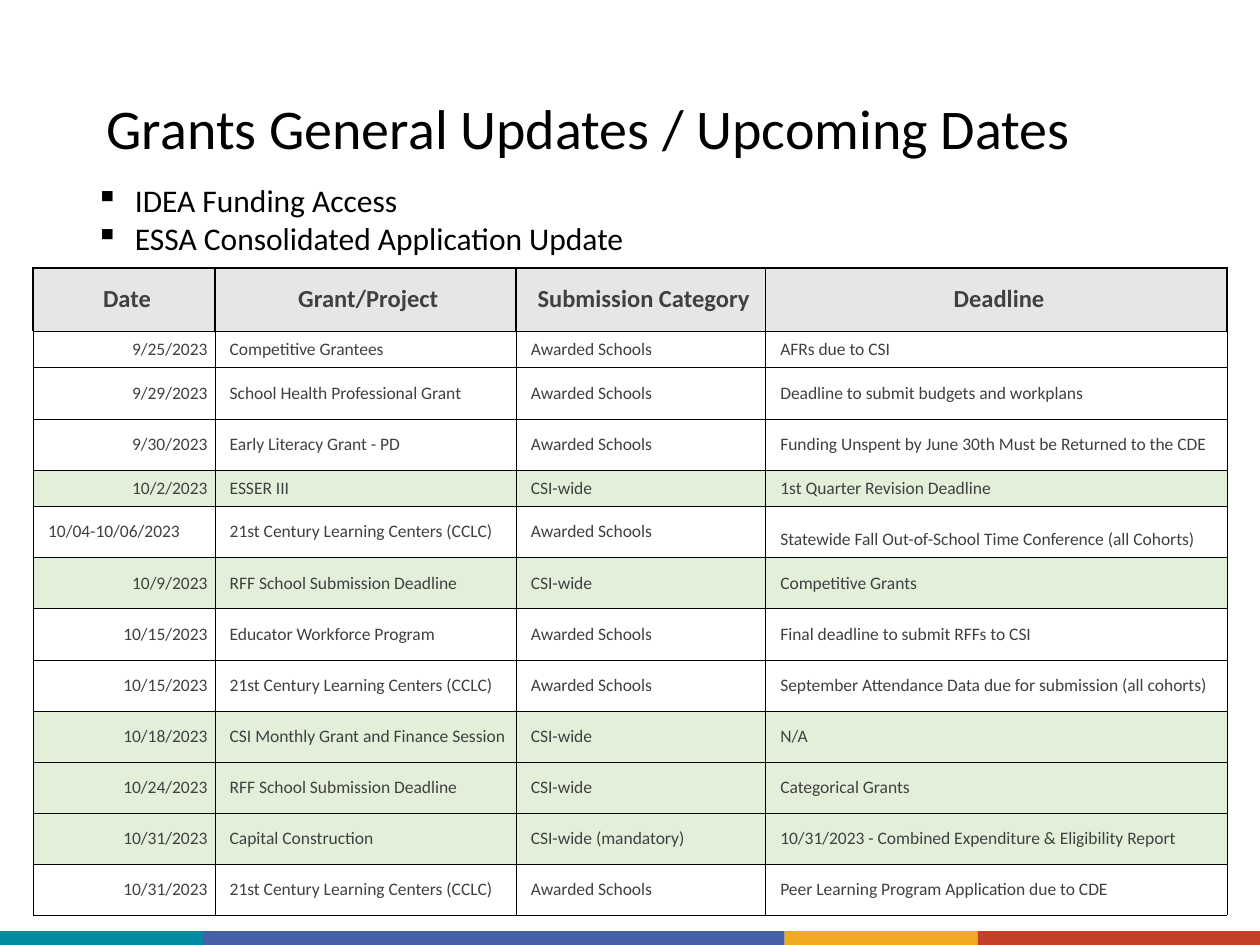
"""Build the grants update slide with its table of upcoming dates."""
from itertools import accumulate

from lxml import etree
from pptx import Presentation
from pptx.dml.color import RGBColor
from pptx.enum import shapes, text
from pptx.oxml import ns
from pptx.util import Cm, Pt

TITLE = "Grants General Updates / Upcoming Dates\u00a0"
UPDATES = ["IDEA Funding Access", "ESSA Consolidated Application Update"]
HEADINGS = ("Date", "Grant/Project", "Submission Category", "Deadline")
CENTERS = "21st Century Learning Centers (CCLC)"
SCHOOLS, WIDE = "Awarded Schools", "CSI-wide"
DATES = [
    ("9/25/2023", "Competitive Grantees", SCHOOLS, "AFRs due to CSI"),
    ("9/29/2023", "School Health Professional Grant", SCHOOLS,
     "Deadline to submit budgets and workplans"),
    ("9/30/2023", "Early Literacy Grant - PD", SCHOOLS,
     "Funding Unspent by June 30th Must be Returned to the CDE"),
    ("10/2/2023", "ESSER III", WIDE, "1st Quarter Revision Deadline"),
    ("10/04-10/06/2023", CENTERS, SCHOOLS,
     "Statewide Fall Out-of-School Time Conference (all Cohorts)"),
    ("10/9/2023", "RFF School Submission Deadline\u00a0", WIDE, "Competitive Grants"),
    ("10/15/2023", "Educator Workforce Program", SCHOOLS,
     "Final deadline to submit RFFs to CSI"),
    ("10/15/2023", CENTERS, SCHOOLS,
     "September Attendance Data due for submission (all cohorts)"),
    ("10/18/2023", "CSI Monthly Grant and Finance Session", WIDE, "N/A"),
    ("10/24/2023", "RFF School Submission Deadline\u00a0", WIDE, "Categorical Grants"),
    ("10/31/2023", "Capital Construction\u00a0", WIDE + " (mandatory)",
     "10/31/2023 - Combined Expenditure & Eligibility Report\u00a0"),
    ("10/31/2023", CENTERS, SCHOOLS, "Peer Learning Program Application due to CDE"),
]
COLUMN_WIDTHS = [3.66, 6.07, 5.03, 9.3]
HEADING_HEIGHT, ROW_HEIGHT, SHORT_HEIGHT = 1.27, 1.03, 0.74
SHORT_DATES = {"9/25/2023", "10/2/2023"}
DATE_RANGE = "10/04-10/06/2023"
FOOTER_BANDS = [("008CA0", 4.09), ("455FA9", 11.73), ("EFAA1F", 3.89), ("C63F28", 5.69)]

ALIGN, ANCHOR = text.PP_ALIGN, text.MSO_ANCHOR
TITLE_FONT = {"name": "Calibri", "size": Pt(32)}
UPDATE_FONT = {"name": "Calibri", "size": Pt(18)}
HEADING_FONT = {"name": "Calibri", "size": Pt(14), "bold": True}
DATE_FONT = {"name": "Calibri", "size": Pt(10), "bold": False}


def apply(target, formats):
    for attribute, value in formats.items():
        setattr(target, attribute, value)


def paint(color_format, color):
    color_format.rgb = RGBColor.from_string(color)


def fill(part, color):
    part.fill.solid()
    paint(part.fill.fore_color, color)


def write(paragraph, words, font, color="000000"):
    run = paragraph.add_run()
    run.text = words
    apply(run.font, font)
    paint(run.font.color, color)


def add_frame(slide, box, anchor):
    frame = slide.shapes.add_textbox(*map(Cm, box)).text_frame
    apply(frame, {"word_wrap": True, "vertical_anchor": anchor})
    return frame


def add_bullet(paragraph):
    properties = paragraph._p.get_or_add_pPr()
    apply_indent = {"marL": Cm(0.79), "indent": Cm(-0.79)}
    for key, value in apply_indent.items():
        properties.set(key, str(value))
    bullet = etree.SubElement(properties, ns.qn("a:buChar"))
    bullet.set("char", "▪")


def add_borders(cell, widths):
    properties = cell._tc.get_or_add_tcPr()
    for position, (side, width) in enumerate(widths.items()):
        line = etree.Element(ns.qn("a:ln" + side), w=str(Pt(width)))
        solid = etree.SubElement(line, ns.qn("a:solidFill"))
        etree.SubElement(solid, ns.qn("a:srgbClr"), val="000000")
        properties.insert(position, line)


def fill_cell(cell, words, font, color, align, anchor, inset, widths):
    apply(cell, {"margin_left": Cm(0.3), "margin_right": Cm(inset),
                 "margin_top": Cm(inset), "margin_bottom": Cm(inset),
                 "vertical_anchor": anchor})
    fill(cell, color)
    paragraph = cell.text_frame.paragraphs[0]
    paragraph.alignment = align
    write(paragraph, words, font, "404040")
    add_borders(cell, widths)


def add_dates(slide):
    heights = [HEADING_HEIGHT] + [SHORT_HEIGHT if entry[0] in SHORT_DATES else ROW_HEIGHT
                                  for entry in DATES]
    dates = slide.shapes.add_table(
        len(heights), len(HEADINGS), Cm(0.67), Cm(5.4),
        Cm(sum(COLUMN_WIDTHS)), Cm(sum(heights))).table
    for column, width in zip(dates.columns, COLUMN_WIDTHS):
        column.width = Cm(width)
    for row, height in zip(dates.rows, heights):
        row.height = Cm(height)

    heading_borders = {"L": 1, "R": 1, "T": 1, "B": 0.25}
    date_borders = dict.fromkeys("LRTB", 0.25)
    for column, heading in enumerate(HEADINGS):
        fill_cell(dates.cell(0, column), heading, HEADING_FONT, "E7E6E6",
                  ALIGN.CENTER, ANCHOR.MIDDLE, 0.18, heading_borders)
    for row, entry in enumerate(DATES, 1):
        color = "E2F0D9" if entry[2].startswith(WIDE) else "FFFFFF"
        is_range = entry[0] == DATE_RANGE
        for column, words in enumerate(entry):
            align = ALIGN.RIGHT if column == 0 and not is_range else ALIGN.LEFT
            anchor = ANCHOR.BOTTOM if column == 3 and is_range else ANCHOR.MIDDLE
            fill_cell(dates.cell(row, column), words, DATE_FONT, color,
                      align, anchor, 0.15, date_borders)


def add_footer(slide):
    ends = accumulate(width for _, width in FOOTER_BANDS)
    for (color, width), end in zip(FOOTER_BANDS, ends):
        band = slide.shapes.add_shape(shapes.MSO_SHAPE.RECTANGLE, Cm(end - width),
                                      Cm(18.77), Cm(width), Cm(0.28))
        band.shadow.inherit = False
        fill(band, color)
        band.line.fill.background()


def main():
    deck = Presentation()
    apply(deck, {"slide_width": Cm(25.4), "slide_height": Cm(19.05)})
    slide = deck.slides.add_slide(deck.slide_layouts[6])
    add_footer(slide)
    title = add_frame(slide, (1.9, 1.6, 22.6, 1.78), ANCHOR.BOTTOM).paragraphs[0]
    title.line_spacing = 0.9
    write(title, TITLE, TITLE_FONT)
    add_dates(slide)
    updates = add_frame(slide, (1.68, 3.53, 22.22, 1.8), ANCHOR.TOP)
    for position, words in enumerate(UPDATES):
        paragraph = updates.add_paragraph() if position else updates.paragraphs[0]
        add_bullet(paragraph)
        write(paragraph, words, UPDATE_FONT)
    deck.save("out.pptx")


if __name__ == "__main__":
    main()
